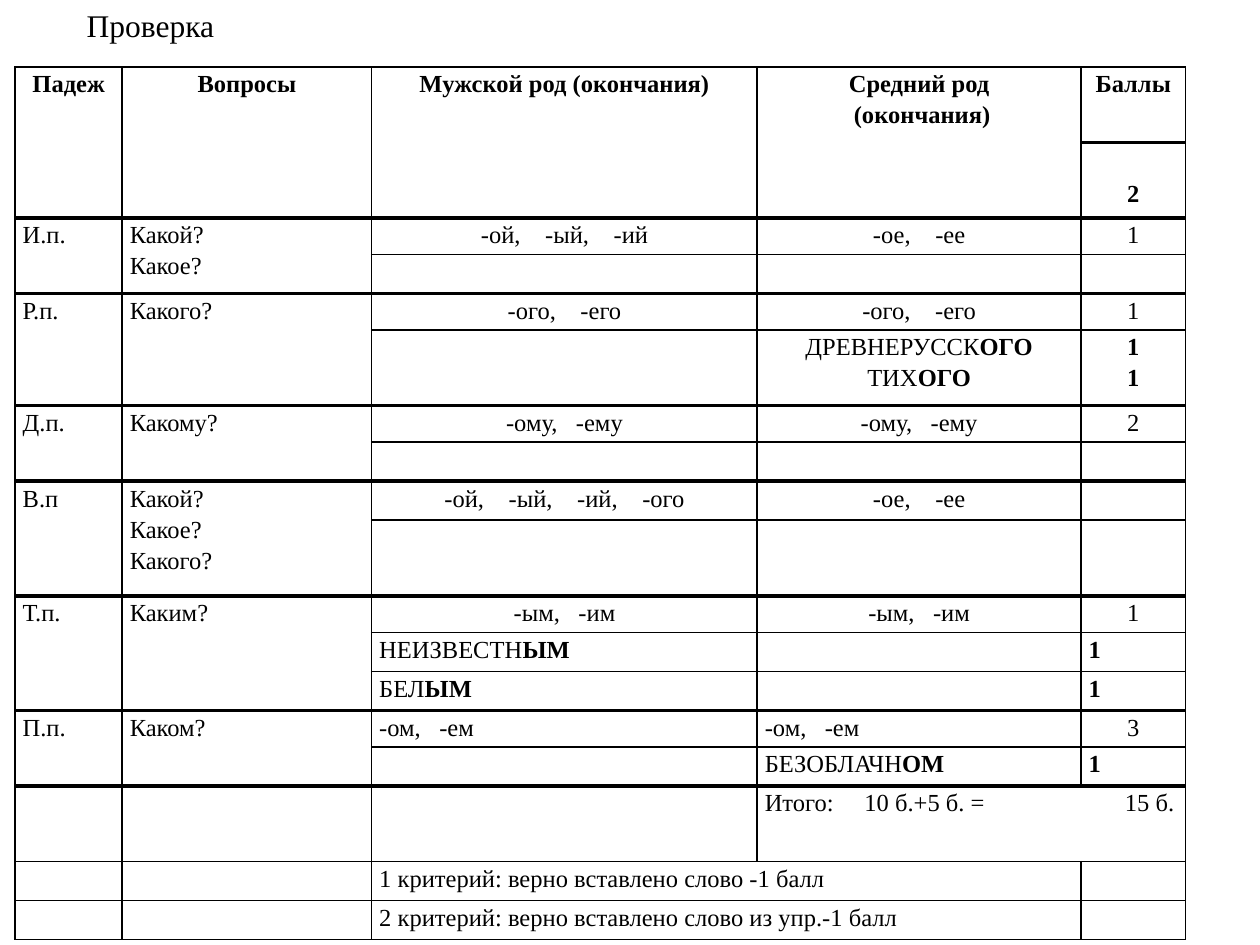
from dataclasses import dataclass
from itertools import product

from lxml.etree import SubElement
from pptx import Presentation
from pptx.dml.color import RGBColor
from pptx.enum.text import PP_ALIGN
from pptx.oxml.ns import qn
from pptx.table import Table, _Cell
from pptx.text.text import TextFrame, _Paragraph
from pptx.util import Inches, Pt

COLORS = {"ink": "000000"}
FONT = "Times New Roman"
COLUMN_WIDTHS = [0.85, 1.98, 3.06, 2.57, 0.83]
ROW_HEIGHTS = [0.6, 0.6, 0.29, 0.31, 0.29, 0.6, 0.29, 0.31, 0.31,
               0.6, 0.29, 0.31, 0.31, 0.29, 0.31, 0.6, 0.31, 0.31]
HEAVY_TOPS = {1, 2, 4, 6, 8, 10, 13, 15}
SPACE_WIDTH = 0.25


@dataclass(frozen=True)
class Entry:
    row: int
    column: int
    text: str
    centered: bool = True
    bold: bool = False
    gap: int = 4
    margin_top: float = 0
    tab: float = 0


@dataclass(frozen=True)
class CaseBlock:
    row: int
    name: str
    questions: str
    masculine: str
    neuter: str
    score: str
    row_span: int = 2
    gap: int = 3
    centered: bool = True


CASES = [
    CaseBlock(2, "И.п.", "Какой?\nКакое?", "-ой,|-ый,|-ий", "-ое,|-ее", "1", gap=4),
    CaseBlock(4, "Р.п.", "Какого?", "-ого,|-его", "-ого,|-его", "1", gap=4),
    CaseBlock(6, "Д.п.", "Какому?", "-ому,|-ему", "-ому,|-ему", "2"),
    CaseBlock(8, "В.п", "Какой?\nКакое?\nКакого?", "-ой,|-ый,|-ий,|-ого",
              "-ое,|-ее", "", gap=4),
    CaseBlock(10, "Т.п.", "Каким?", "-ым,|-им", "-ым,|-им", "1", row_span=3),
    CaseBlock(13, "П.п.", "Каком?", "-ом,|-ем", "-ом,|-ем", "3", centered=False),
]
HEADINGS = ["Падеж", "Вопросы", "Мужской род (окончания)",
            "Средний род\n (окончания)", "Баллы"]
ENTRIES = [
    Entry(1, 4, "2", bold=True, margin_top=0.27),
    Entry(5, 3, "ДРЕВНЕРУССК*ОГО*\nТИХ*ОГО*"),
    Entry(5, 4, "1\n1", bold=True),
    Entry(11, 2, "НЕИЗВЕСТН*ЫМ*", centered=False),
    Entry(11, 4, "1", centered=False, bold=True),
    Entry(12, 2, "БЕЛ*ЫМ*", centered=False),
    Entry(12, 4, "1", centered=False, bold=True),
    Entry(14, 3, "БЕЗОБЛАЧН*ОМ*", centered=False),
    Entry(14, 4, "1", centered=False, bold=True),
    Entry(15, 3, "Итого:|10 б.+5 б. =\t15 б.", centered=False, gap=5, tab=3.25),
    Entry(16, 2, "1 критерий: верно вставлено слово -1 балл", centered=False),
    Entry(17, 2, "2 критерий: верно вставлено слово из упр.-1 балл", centered=False),
]


def add_run(paragraph: _Paragraph, text: str, size: float, bold: bool,
            spacing: float = 0) -> None:
    run = paragraph.add_run()
    run.text = text
    run.font.name = FONT
    run.font.size = Pt(size)
    run.font.bold = bold
    run.font.color.rgb = RGBColor.from_string(COLORS["ink"])
    if spacing:
        run.font._element.set("spc", str(round(spacing * 100)))


def write_text(frame: TextFrame, text: str, *, size: float = 14, bold: bool = False,
               centered: bool = False, line_spacing: float = 1.15,
               gap: int = 1, tab: float = 0) -> None:
    for index, line in enumerate(text.split("\n")):
        paragraph = frame.add_paragraph() if index else frame.paragraphs[0]
        paragraph.alignment = PP_ALIGN.CENTER if centered else PP_ALIGN.LEFT
        paragraph.line_spacing = line_spacing
        if tab:
            tabs = SubElement(paragraph._p.get_or_add_pPr(), qn("a:tabLst"))
            SubElement(tabs, qn("a:tab"), pos=str(Inches(tab)), algn="r")
        for part_index, part in enumerate(line.split("*")):
            emphasis = bold or part_index % 2 == 1
            for word_index, words in enumerate(part.split("|")):
                if word_index:
                    add_run(paragraph, " ", size, emphasis, (gap - 1) * size * SPACE_WIDTH)
                if words:
                    add_run(paragraph, words, size, emphasis)
        if not line:
            SubElement(paragraph._p, qn("a:endParaRPr"), sz=str(size * 100))


def set_borders(cell: _Cell, top: float, bottom: float) -> None:
    properties = cell._tc.get_or_add_tcPr()
    for side, width in {"lnL": 1, "lnR": 1, "lnT": top, "lnB": bottom}.items():
        line = SubElement(properties, qn(f"a:{side}"), w=str(Pt(width)))
        fill = SubElement(line, qn("a:solidFill"))
        SubElement(fill, qn("a:srgbClr"), val=COLORS["ink"])


def line_width(row: int) -> float:
    return 2.25 if row in HEAVY_TOPS else 1


def merge_cells(table: Table) -> dict[tuple[int, int], tuple[int, int]]:
    spans = {(0, column): (2, 1) for column in range(4)}
    spans |= {(case.row, column): (case.row_span, 1)
              for case, column in product(CASES, range(2))}
    spans |= {(15, 3): (1, 2), (16, 2): (1, 2), (17, 2): (1, 2)}
    for (row, column), (height, width) in spans.items():
        table.cell(row, column).merge(table.cell(row + height - 1, column + width - 1))
    return spans


def format_cells(table: Table) -> None:
    spans = merge_cells(table)
    for origin in product(range(len(ROW_HEIGHTS)), range(len(COLUMN_WIDTHS))):
        if table.cell(*origin).is_spanned:
            continue
        height, width = spans.get(origin, (1, 1))
        row, column = origin
        for row_offset, column_offset in product(range(height), range(width)):
            cell = table.cell(row + row_offset, column + column_offset)
            set_borders(cell, line_width(row), line_width(row + height))
            cell.fill.background()
            cell.margin_left = cell.margin_right = Inches(0.06)
            cell.margin_top = cell.margin_bottom = 0


def case_entries(case: CaseBlock) -> list[Entry]:
    return [
        Entry(case.row, 0, case.name, centered=False),
        Entry(case.row, 1, case.questions, centered=False),
        Entry(case.row, 2, case.masculine, centered=case.centered, gap=case.gap),
        Entry(case.row, 3, case.neuter, centered=case.centered, gap=case.gap),
        Entry(case.row, 4, case.score),
    ]


def fill_table(table: Table) -> None:
    headings = [Entry(0, column, text, bold=True) for column, text in enumerate(HEADINGS)]
    cases = [entry for case in CASES for entry in case_entries(case)]
    entries = {(entry.row, entry.column): entry for entry in headings + cases + ENTRIES}
    for row, column in product(range(len(ROW_HEIGHTS)), range(len(COLUMN_WIDTHS))):
        entry = entries.get((row, column), Entry(row, column, ""))
        cell = table.cell(row, column)
        cell.margin_top = Inches(entry.margin_top)
        write_text(cell.text_frame, entry.text, bold=entry.bold,
                   centered=entry.centered, gap=entry.gap, tab=entry.tab)


def main() -> None:
    presentation = Presentation()
    presentation.slide_width = Inches(10)
    presentation.slide_height = Inches(7.5)
    slide = presentation.slides.add_slide(presentation.slide_layouts[6])

    table = slide.shapes.add_table(
        len(ROW_HEIGHTS), len(COLUMN_WIDTHS), Inches(0.12), Inches(0.53),
        Inches(sum(COLUMN_WIDTHS)), Inches(sum(ROW_HEIGHTS))).table
    table.first_row = False
    table.horz_banding = False
    for column, width in zip(table.columns, COLUMN_WIDTHS):
        column.width = Inches(width)
    for row, height in zip(table.rows, ROW_HEIGHTS):
        row.height = Inches(height)
    format_cells(table)
    fill_table(table)

    title = slide.shapes.add_textbox(Inches(0.59), 0, Inches(3.46), Inches(0.4))
    title.text_frame.word_wrap = True
    write_text(title.text_frame, "Проверка", size=18, line_spacing=1.0)
    presentation.save("out.pptx")


if __name__ == "__main__":
    main()
